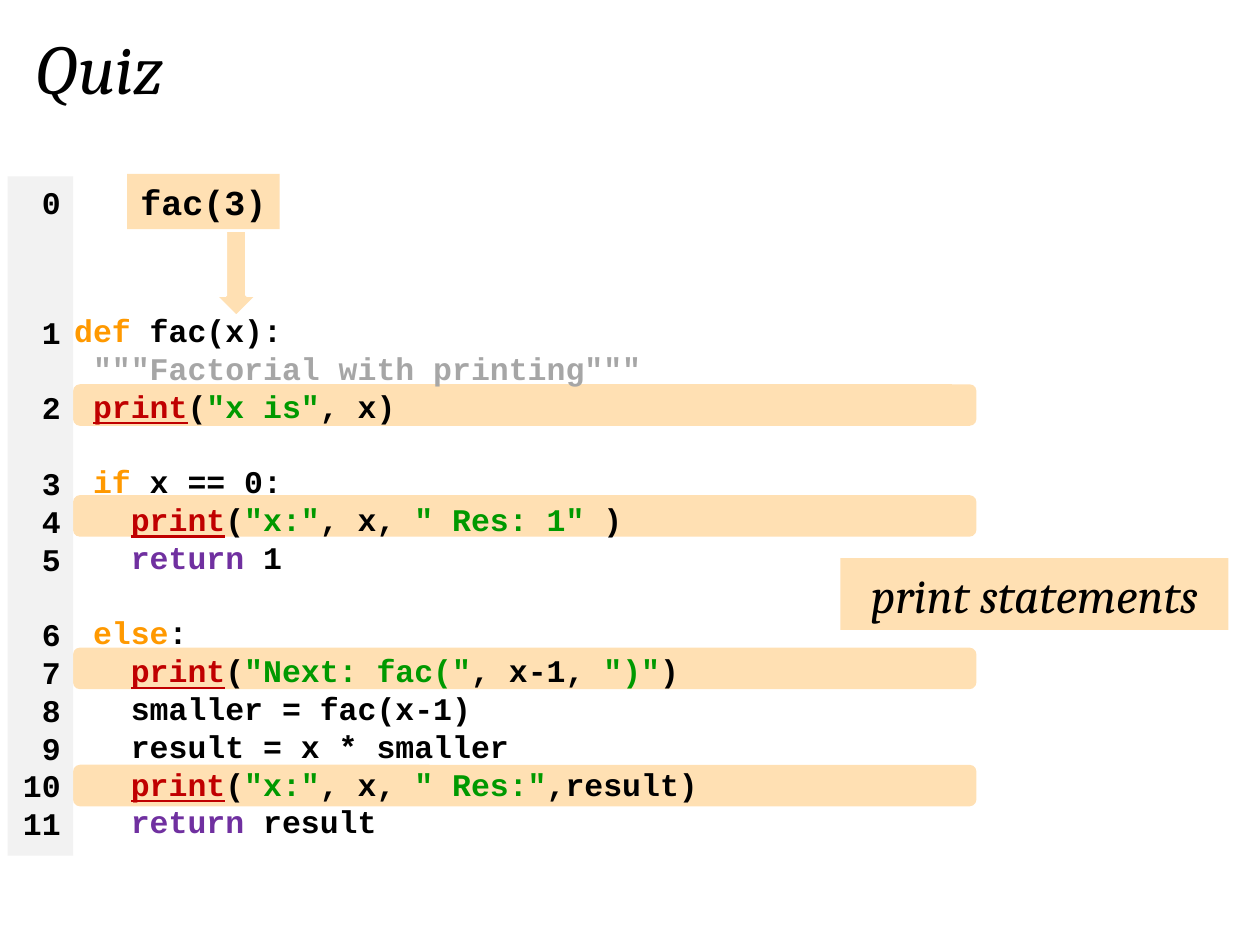
from pptx import Presentation
from pptx.dml.color import RGBColor
from pptx.enum import shapes, text
from pptx.util import Emu, Pt

PX = 9144  # 100 px to the inch
COLUMN = 15  # width of one code character
BLACK = RGBColor(0x00, 0x00, 0x00)
WHITE = RGBColor(0xFF, 0xFF, 0xFF)
PEACH = RGBColor(0xFF, 0xE0, 0xB3)
LIGHT = RGBColor(0xF2, 0xF2, 0xF2)
GRAY = RGBColor(0xA6, 0xA6, 0xA6)
ORANGE = RGBColor(0xFF, 0x99, 0x00)
RED = RGBColor(0xC0, 0x00, 0x00)
GREEN = RGBColor(0x00, 0x99, 0x00)
PURPLE = RGBColor(0x70, 0x30, 0xA0)
SHAPE = shapes.MSO_SHAPE
TOP, MIDDLE = text.MSO_ANCHOR.TOP, text.MSO_ANCHOR.MIDDLE
LEFT, CENTER, RIGHT = text.PP_ALIGN.LEFT, text.PP_ALIGN.CENTER, text.PP_ALIGN.RIGHT


class Page:
    serif, mono = "Cambria", "Courier New"
    code_size, pitch = 18, 21.6

    def __init__(self, deck):
        self.slide = deck.slides.add_slide(deck.slide_layouts[6])

    def shape(self, kind, place, fill, line=None):
        shape = self.slide.shapes.add_shape(kind, *(Emu(n * PX) for n in place))
        shape.shadow.inherit = False
        shape.fill.solid()
        shape.fill.fore_color.rgb = fill
        if line is None:
            shape.line.fill.background()
        else:
            shape.line.color.rgb = line
            shape.line.width = Pt(1.5)
        return shape

    def textbox(self, place):
        return self.slide.shapes.add_textbox(*(Emu(n * PX) for n in place))

    def frame(self, box, anchor, wrap=True):
        box.text_frame.word_wrap = wrap
        box.text_frame.vertical_anchor = anchor
        return box.text_frame

    def style(self, para, size, align, mono):
        para.alignment = align
        para.font.size = Pt(size)
        para.font.name = self.mono if mono else self.serif
        para.font.bold, para.font.italic = mono, not mono
        para.font.color.rgb = BLACK

    def label(self, box, words, size, mono=False, wrap=False):
        para = self.frame(box, MIDDLE, wrap).paragraphs[0]
        para.text = words
        self.style(para, size, CENTER, mono)

    def lines(self, box, rows, align):
        """Each row is (space before in points, indent in columns, spans)."""
        frame = self.frame(box, TOP)
        for index, (gap, indent, spans) in enumerate(rows):
            para = frame.add_paragraph() if index else frame.paragraphs[0]
            self.style(para, self.code_size, align, True)
            para.line_spacing = Pt(self.pitch)
            para.space_before = Pt(gap)
            if indent:
                para._p.get_or_add_pPr().set("marL", str(indent * COLUMN * PX))
            for words, color in spans:
                span = para.add_run()
                span.text = words
                span.font.color.rgb = color
                if color == RED:
                    span.font.underline = True


def print_call(*arguments):
    return [("print", RED), ("(", BLACK), *arguments]


BLANK = Page.pitch  # space of one empty code line
CODE = [
    (0, 1, [("def ", ORANGE), ("fac(x):", BLACK)]),
    (0, 2, [('"""Factorial with printing"""', GRAY)]),
    (0, 2, print_call(('"x is"', GREEN), (", x)", BLACK))),
    (BLANK, 2, [("if ", ORANGE), ("x == 0:", BLACK)]),
    (0, 4, print_call(('"x:"', GREEN), (", x, ", BLACK), ('" Res: 1"', GREEN), (" )", BLACK))),
    (0, 4, [("return ", PURPLE), ("1", BLACK)]),
    (BLANK, 2, [("else", ORANGE), (":", BLACK)]),
    (0, 4, print_call(('"Next: fac("', GREEN), (", x-1, ", BLACK), ('")"', GREEN), (")", BLACK))),
    (0, 4, [("smaller = fac(x-1)", BLACK)]),
    (0, 4, [("result = x * smaller", BLACK)]),
    (0, 4, print_call(('"x:"', GREEN), (", x, ", BLACK), ('" Res:"', GREEN), (",result)", BLACK))),
    (0, 4, [("return", PURPLE), (" result", BLACK)]),
]
NUMBER_GAPS = {1: 52.8, 2: BLANK, 3: BLANK, 6: BLANK}


def main():
    deck = Presentation()
    deck.slide_width, deck.slide_height = Emu(1000 * PX), Emu(750 * PX)
    page = Page(deck)

    # Bands behind the print calls
    for top in (305, 393, 514, 607):
        page.shape(SHAPE.ROUNDED_RECTANGLE, (58, top, 717, 33), PEACH)

    # Code and title
    page.lines(page.textbox((34, 242, 550, 434)), CODE, LEFT)
    page.label(page.textbox((16, 14, 126, 77)), "Quiz", 40)

    # Line numbers
    gutter = page.shape(SHAPE.RECTANGLE, (6, 140, 52, 539), LIGHT)
    numbers = [(NUMBER_GAPS.get(n, 0), 0, [(str(n), BLACK)]) for n in range(12)]
    page.lines(gutter, numbers, RIGHT)

    # Call with its arrow, and the caption
    page.shape(SHAPE.DOWN_ARROW, (171, 183, 33, 68), PEACH, WHITE)
    call = page.shape(SHAPE.RECTANGLE, (101, 138, 121, 44), PEACH)
    page.label(call, "fac(3)", 20, mono=True)
    caption = page.shape(SHAPE.RECTANGLE, (667, 443, 308, 57), PEACH)
    page.label(caption, "print statements", 28, wrap=True)

    deck.save("out.pptx")


if __name__ == "__main__":
    main()
